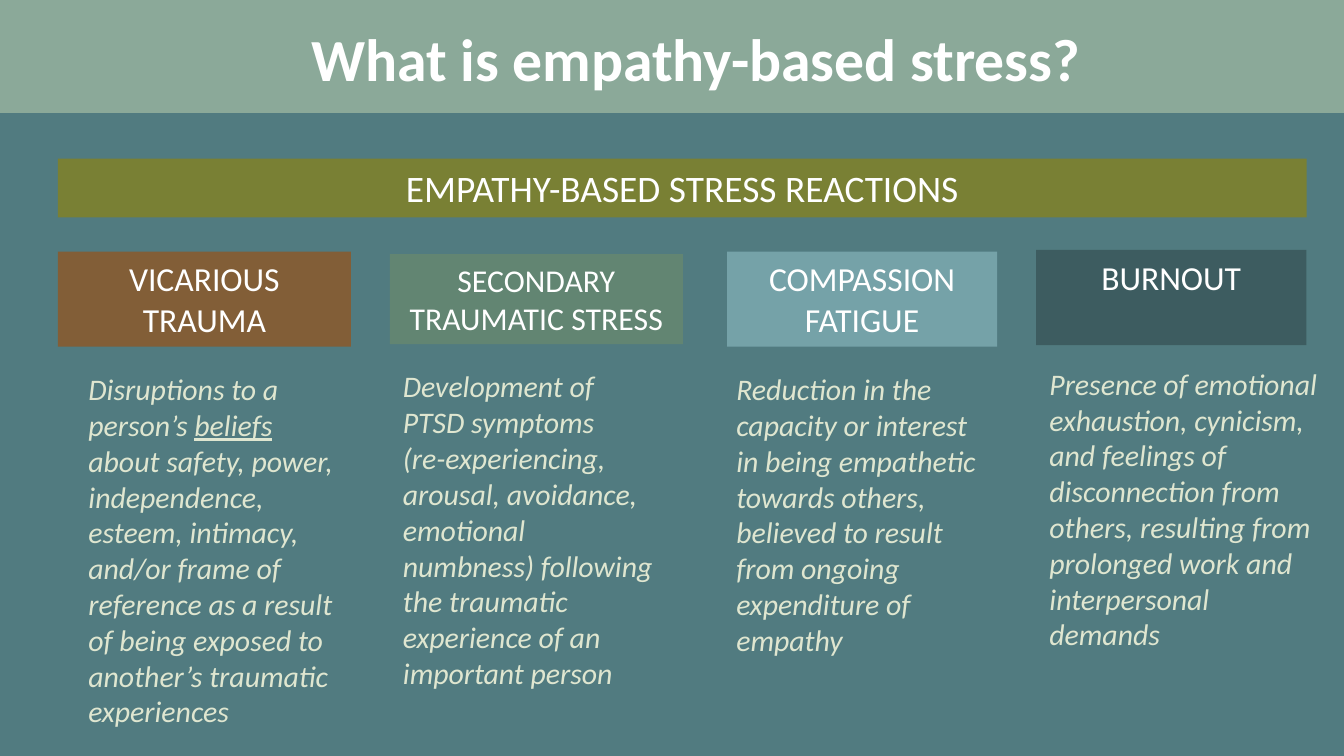
from pptx import Presentation
from pptx.dml.color import RGBColor
from pptx.enum.shapes import MSO_SHAPE
from pptx.enum.text import MSO_ANCHOR, PP_ALIGN
from pptx.util import Pt

COLORS = {
    "background": "517B80",
    "header": "8BA999",
    "banner": "798034",
    "brown": "825E37",
    "green": "628572",
    "blue": "75A2A8",
    "slate": "3D5C60",
    "white": "FFFFFF",
    "body": "DFE6D0",
}
FONT = "Calibri"
TITLE = "What is empathy-based stress?"
BANNER = "EMPATHY-BASED STRESS REACTIONS"

REACTIONS = [
    {"label": "VICARIOUS\nTRAUMA", "color": "brown", "size": 18,
     "box": (31, 134.8, 157, 51), "body_box": (40.3, 195.1, 148.3, 115.2),
     "body": [("Disruptions to a person’s ", False), ("beliefs ", True),
              ("about safety, power, independence, esteem, intimacy, and/or frame of "
               "reference as a result of being exposed to another’s traumatic "
               "experiences", False)]},
    {"label": "SECONDARY TRAUMATIC STRESS", "color": "green", "size": 17,
     "box": (208.8, 136.2, 157, 48.2), "body_box": (208.8, 193.7, 148.3, 115.2),
     "body": [("Development of PTSD symptoms\n(re-experiencing, arousal, avoidance, "
               "emotional numbness) following the traumatic experience of an "
               "important person", False)]},
    {"label": "COMPASSION FATIGUE", "color": "blue", "size": 18,
     "box": (389.5, 134.8, 144.7, 51), "body_box": (387.4, 195.1, 148.3, 115.2),
     "body": [("Reduction in the capacity or interest in being empathetic towards "
               "others, believed to result from ongoing expenditure of empathy", False)]},
    {"label": "BURNOUT", "color": "slate", "size": 18,
     "box": (555.1, 133.9, 144.7, 51), "body_box": (555.1, 192.2, 159.1, 114.5),
     "body": [("Presence of emotional exhaustion, cynicism, and feelings of "
               "disconnection from others, resulting from prolonged work and "
               "interpersonal demands", False)]},
]


def rgb(name):
    return RGBColor.from_string(COLORS[name])


def add_rect(s, box, color):
    sp = s.shapes.add_shape(MSO_SHAPE.RECTANGLE, *map(Pt, box))
    sp.shadow.inherit = False
    sp.fill.solid()
    sp.fill.fore_color.rgb = rgb(color)
    sp.line.fill.background()
    return sp


def write(sp, runs, size, color, align=PP_ALIGN.LEFT, bold=False, italic=False):
    tf = sp.text_frame
    tf.word_wrap = True
    tf.vertical_anchor = MSO_ANCHOR.TOP
    p = tf.paragraphs[0]
    p.alignment = align
    for text, underline in runs:
        for i, line in enumerate(text.split("\n")):
            if i:
                p.add_line_break()
            r = p.add_run()
            r.text = line
            r.font.name = FONT
            r.font.size = Pt(size)
            r.font.color.rgb = rgb(color)
            r.font.bold = bold
            r.font.italic = italic
            r.font.underline = underline


def main():
    prs = Presentation()
    prs.slide_width, prs.slide_height = Pt(720), Pt(405)
    s = prs.slides.add_slide(prs.slide_layouts[6])
    s.background.fill.solid()
    s.background.fill.fore_color.rgb = rgb("background")

    banner = add_rect(s, (31, 85, 669, 31.5), "banner")
    write(banner, [(BANNER, False)], 20, "white", PP_ALIGN.CENTER)

    for reaction in REACTIONS:
        label = add_rect(s, reaction["box"], reaction["color"])
        write(label, [(reaction["label"], False)], reaction["size"], "white", PP_ALIGN.CENTER)
        body = s.shapes.add_textbox(*map(Pt, reaction["body_box"]))
        write(body, reaction["body"], 16, "body", italic=True)

    header = add_rect(s, (0, 0, 720, 59.8), "header")
    header.line.color.rgb = rgb("header")
    header.line.width = Pt(1.25)

    title = s.shapes.add_textbox(Pt(150.5), Pt(8.6), Pt(445), Pt(28))
    tf = title.text_frame
    tf.margin_left = tf.margin_right = Pt(5)
    tf.margin_top = tf.margin_bottom = Pt(2.9)
    write(title, [(TITLE, False)], 32, "white", PP_ALIGN.CENTER, bold=True)

    prs.save("out.pptx")


if __name__ == "__main__":
    main()
